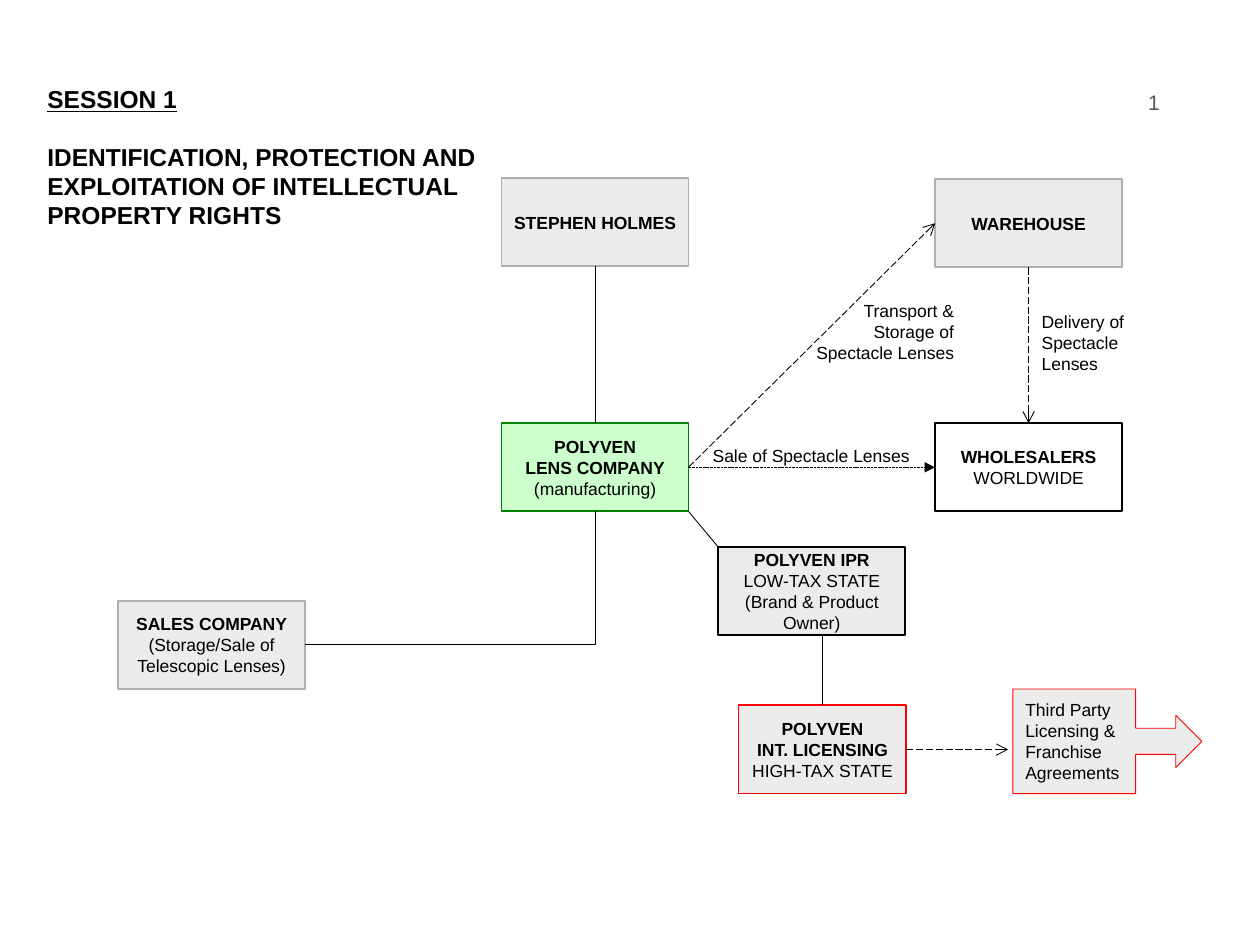
from pptx import Presentation
from pptx.dml.color import RGBColor
from pptx.enum.dml import MSO_LINE
from pptx.enum.shapes import MSO_CONNECTOR, MSO_SHAPE
from pptx.enum.text import MSO_ANCHOR, MSO_AUTO_SIZE, PP_ALIGN
from pptx.oxml.ns import qn
from pptx.util import Cm, Pt

BLACK = RGBColor(0x00, 0x00, 0x00)
GREY = RGBColor(0xEC, 0xEC, 0xEC)
EDGE = RGBColor(0xAF, 0xAF, 0xAF)
MINT = RGBColor(0xCC, 0xFF, 0xCC)
GREEN = RGBColor(0x00, 0x80, 0x00)
RED = RGBColor(0xFF, 0x00, 0x00)
SLATE = RGBColor(0x56, 0x56, 0x56)

RECT, CALLOUT = MSO_SHAPE.RECTANGLE, MSO_SHAPE.RIGHT_ARROW_CALLOUT
LONG, SHORT = MSO_LINE.LONG_DASH, MSO_LINE.SQUARE_DOT
STRAIGHT, ELBOW = MSO_CONNECTOR.STRAIGHT, MSO_CONNECTOR.ELBOW
LEFT, CENTER, RIGHT = PP_ALIGN.LEFT, PP_ALIGN.CENTER, PP_ALIGN.RIGHT
TOP, MIDDLE = MSO_ANCHOR.TOP, MSO_ANCHOR.MIDDLE
FIXED = MSO_AUTO_SIZE.NONE

WIDE, HIGH = 3.77, 1.78  # usual node size in cm


def write(frame, lines, bold=0, size=10, align=LEFT, color=BLACK):
    """Fill a frame with one paragraph per line, the first few in bold."""
    frame.word_wrap = True
    frame.text = "\n".join(lines)
    for i, para in enumerate(frame.paragraphs):
        para.alignment = align
        font = para.font
        font.name, font.size, font.bold = "Arial", Pt(size), i < bold
        font.color.rgb = color


def node(slide, x, y, lines, bold=1, fill=GREY, edge=EDGE, wide=WIDE):
    box = slide.shapes.add_shape(RECT, Cm(x), Cm(y), Cm(wide), Cm(HIGH))
    paint(box, fill, edge, 1)
    frame = box.text_frame
    frame.vertical_anchor = MIDDLE
    frame.margin_left = frame.margin_right = Cm(0.2)
    write(frame, lines, bold, align=CENTER)
    return box


def paint(shape, fill, edge, weight):
    shape.shadow.inherit = False
    if fill is None:
        shape.fill.background()
    else:
        shape.fill.solid()
        shape.fill.fore_color.rgb = fill
    shape.line.color.rgb = edge
    shape.line.width = Pt(weight)


def label(slide, x, y, wide, high, text, align=LEFT):
    box = slide.shapes.add_textbox(Cm(x), Cm(y), Cm(wide), Cm(high))
    write(box.text_frame, [text], align=align)


def spot(shape, across, down):
    """Point on a shape, as fractions of its width and height."""
    return (shape.left + int(shape.width * across),
            shape.top + int(shape.height * down))


def link(slide, start, end, dash=None, head=None, kind=STRAIGHT):
    line = slide.shapes.add_connector(kind, *start, *end)
    line.line.color.rgb = BLACK
    line.line.width = Pt(0.5)
    if dash:
        line.line.dash_style = dash
    props = line._element.spPr
    if head:
        ln = props.find(qn("a:ln"))
        ln.append(ln.makeelement(qn("a:tailEnd"), {"type": head}))
    if kind == ELBOW:  # a single bend
        props.find(qn("a:prstGeom")).set("prst", "bentConnector2")
    props.append(props.makeelement(qn("a:effectLst"), {}))


def header(slide, x, y):
    title = slide.shapes.title
    title.left, title.top = Cm(x), Cm(y)
    title.width, title.height = Cm(9.4), Cm(3.25)
    frame = title.text_frame
    frame.auto_size = FIXED
    frame.vertical_anchor = TOP
    write(frame, ["SESSION 1", "IDENTIFICATION, PROTECTION AND "
                  "EXPLOITATION OF INTELLECTUAL PROPERTY RIGHTS"], 2, 14)
    first, second = frame.paragraphs
    first.font.underline = True
    second.space_before = Pt(16)

    page = slide.shapes.add_textbox(Cm(x + 17.22), Cm(y + 0.23),
                                    Cm(5.46), Cm(1.02)).text_frame
    page.margin_left = page.margin_right = 0
    page.margin_top = page.margin_bottom = 0
    write(page, ["1"], size=12, align=RIGHT, color=SLATE)


def core(slide, x, y):
    """Owner, lens maker and sales company; returns the lens maker."""
    owner = node(slide, x + 7.73, y, ["STEPHEN HOLMES"])
    maker = node(slide, x + 7.73, y + 4.94,
                 ["POLYVEN", "LENS COMPANY", "(manufacturing)"],
                 2, MINT, GREEN)
    sales = node(slide, x, y + 8.52,
                 ["SALES COMPANY", "(Storage/Sale of Telescopic Lenses)"])
    link(slide, spot(owner, 0.5, 1), spot(maker, 0.5, 0))
    link(slide, spot(sales, 1, 0.5), spot(maker, 0.5, 1), kind=ELBOW)
    return maker


def trade(slide, x, y, maker):
    """Warehouse, wholesalers and the flow of lenses to them."""
    store = node(slide, x + 5.08, y, ["WAREHOUSE"])
    buyers = node(slide, x + 5.08, y + 4.92, ["WHOLESALERS", "WORLDWIDE"],
                  fill=None, edge=BLACK)
    out = spot(maker, 1, 0.5)
    link(slide, out, spot(buyers, 0, 0.5), SHORT, "triangle")
    link(slide, out, spot(store, 0, 0.5), LONG, "arrow")
    link(slide, spot(store, 0.5, 1), spot(buyers, 0.5, 0), LONG, "arrow")
    label(slide, x, y + 5.23, 5.16, 0.69, "Sale of Spectacle Lenses", CENTER)
    label(slide, x + 2.31, y + 2.31, 3.4, 1.55,
          "Transport & Storage of Spectacle Lenses", RIGHT)
    label(slide, x + 6.98, y + 2.54, 3.18, 1.55,
          "Delivery of Spectacle Lenses")


def rights(slide, x, y, maker):
    """Owner of the rights, licensing company and third parties."""
    holder = node(slide, x, y, ["POLYVEN IPR", "LOW-TAX STATE",
                                "(Brand & Product Owner)"], edge=BLACK)
    agent = node(slide, x + 0.41, y + 3.19,
                 ["POLYVEN", "INT. LICENSING", "HIGH-TAX STATE"],
                 2, edge=RED, wide=3.38)
    third = slide.shapes.add_shape(CALLOUT, Cm(x + 5.94), Cm(y + 2.86),
                                   Cm(3.81), Cm(2.11))
    paint(third, GREY, RED, 0.5)
    third.text_frame.vertical_anchor = MIDDLE
    write(third.text_frame, ["Third Party Licensing & Franchise Agreements"])

    link(slide, spot(maker, 1, 1), spot(holder, 0, 0))
    mid, top = spot(agent, 0.5, 0)
    link(slide, (mid, spot(holder, 0, 1)[1]), (mid, top))
    side, level = spot(agent, 1, 0.5)
    link(slide, (side, level), (third.left - Cm(0.1), level), LONG, "arrow")


def main():
    deck = Presentation()
    deck.slide_width, deck.slide_height = Cm(25.4), Cm(19.05)
    slide = deck.slides.add_slide(deck.slide_layouts[5])
    header(slide, 0.7, 1.57)
    maker = core(slide, 2.38, 3.59)
    trade(slide, 13.77, 3.61, maker)
    rights(slide, 14.48, 11.03, maker)
    deck.save("out.pptx")


if __name__ == "__main__":
    main()
